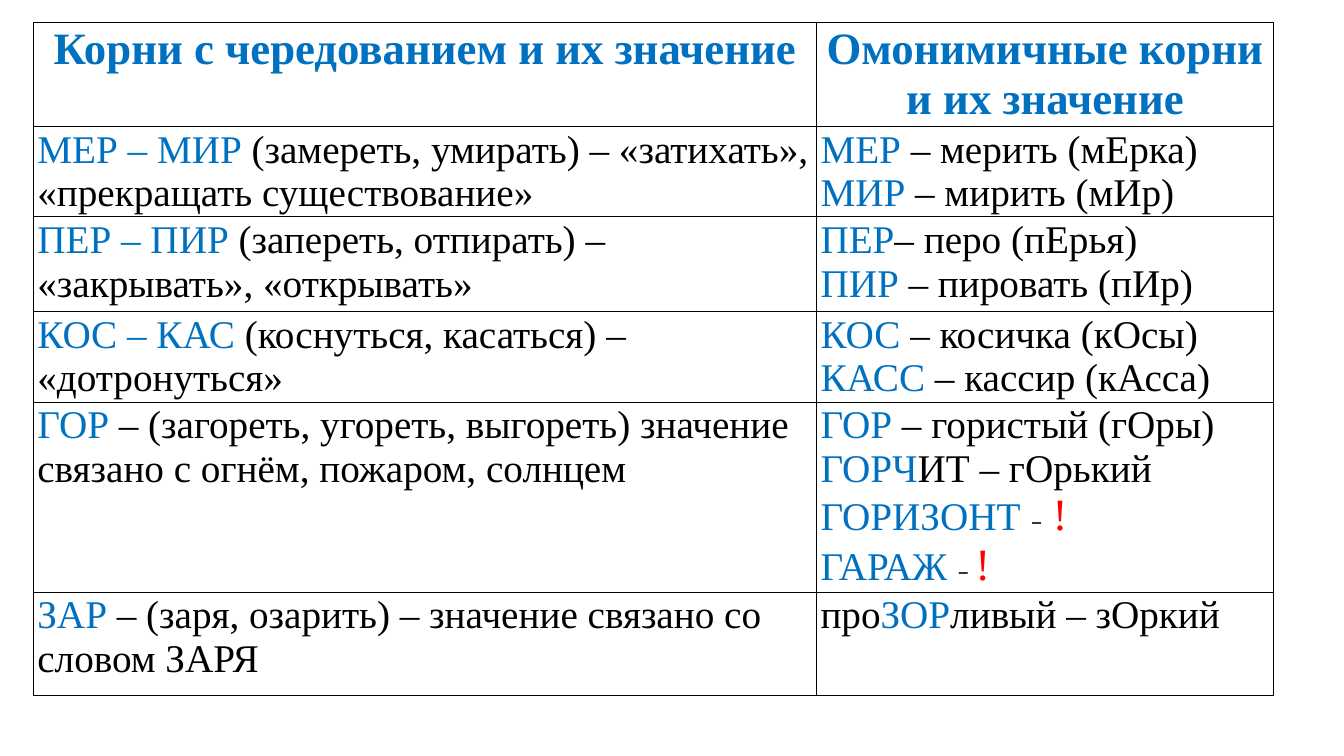
import pptx
import pptx.dml.color
import pptx.enum.text
import pptx.oxml
import pptx.oxml.ns
import pptx.util
from pptx.util import Pt

BLUE = pptx.dml.color.RGBColor(0x00, 0x70, 0xC0)
BLACK = pptx.dml.color.RGBColor(0x00, 0x00, 0x00)
RED = pptx.dml.color.RGBColor(0xFF, 0x00, 0x00)
WHITE = pptx.dml.color.RGBColor(0xFF, 0xFF, 0xFF)

# Run styles: font, size in points, colour, bold
HEADING = ("Times New Roman", 32, BLUE, True)
ROOT = ("Times New Roman", 28, BLUE, False)
PLAIN = ("Times New Roman", 28, BLACK, False)
DASH = ("Calibri", 18, BLACK, False)
ALERT = ("Times New Roman", 32, RED, False)

COLUMN_WIDTHS = [559.4, 326.2]
ROW_HEIGHTS = [74, 64, 67.7, 64, 135.5, 73.5]

# Each cell is a list of paragraphs, each paragraph a list of (text, style) runs
ROWS = [
    [
        [[("Корни с чередованием и их значение", HEADING)]],
        [[("Омонимичные корни и их значение", HEADING)]],
    ],
    [
        [[("МЕР – МИР ", ROOT),
          ("(замереть, умирать) – «затихать», «прекращать существование»", PLAIN)]],
        [[("МЕР", ROOT), (" – мерить (мЕрка)", PLAIN)],
         [("МИР", ROOT), (" – мирить (мИр)", PLAIN)]],
    ],
    [
        [[("ПЕР – ПИР ", ROOT),
          ("(запереть, отпирать) – «закрывать», «открывать»", PLAIN)]],
        [[("ПЕР", ROOT), ("– перо (пЕрья)", PLAIN)],
         [("ПИР", ROOT), (" – пировать (пИр)", PLAIN)]],
    ],
    [
        [[("КОС – КАС ", ROOT),
          ("(коснуться, касаться) – «дотронуться»", PLAIN)]],
        [[("КОС", ROOT), (" – косичка (кОсы)", PLAIN)],
         [("КАСС", ROOT), (" – кассир (кАсса)", PLAIN)]],
    ],
    [
        [[("ГОР ", ROOT),
          ("– (загореть, угореть, выгореть) значение связано с огнём, пожаром, солнцем",
           PLAIN)]],
        [[("ГОР", ROOT), (" – гористый (гОры)", PLAIN)],
         [("ГОРЧ", ROOT), ("ИТ – гОрький", PLAIN)],
         [("ГОРИЗОНТ ", ROOT), ("–", DASH), (" ", ROOT), ("!", ALERT)],
         [("ГАРАЖ ", ROOT), ("– ", DASH), ("!", ALERT)]],
    ],
    [
        [[("ЗАР", ROOT),
          (" – (заря, озарить) – значение связано со словом ЗАРЯ", PLAIN)]],
        [[("про", PLAIN), ("ЗОР", ROOT), ("ливый – зОркий", PLAIN)]],
    ],
]


def add_borders(cell):
    properties = cell._tc.get_or_add_tcPr()
    for side in ("lnL", "lnR", "lnT", "lnB"):
        properties.append(pptx.oxml.parse_xml(
            f'<a:{side} {pptx.oxml.ns.nsdecls("a")} w="{Pt(0.6)}">'
            f'<a:solidFill><a:srgbClr val="{BLACK}"/></a:solidFill></a:{side}>'))


def fill_paragraph(paragraph, runs):
    for text, (font_name, size, color, bold) in runs:
        run = paragraph.add_run()
        run.text = text
        run.font.name = font_name
        run.font.size = Pt(size)
        run.font.color.rgb = color
        run.font.bold = bold


presentation = pptx.Presentation()
presentation.slide_width = Pt(960)
presentation.slide_height = Pt(540)
slide = presentation.slides.add_slide(presentation.slide_layouts[6])

table = slide.shapes.add_table(
    len(ROW_HEIGHTS), len(COLUMN_WIDTHS), Pt(24), Pt(16.2),
    Pt(sum(COLUMN_WIDTHS)), Pt(sum(ROW_HEIGHTS))).table
table.first_row = False
table.horz_banding = False
for column, width in zip(table.columns, COLUMN_WIDTHS):
    column.width = Pt(width)
for row, height in zip(table.rows, ROW_HEIGHTS):
    row.height = Pt(height)

for row, row_content in zip(table.rows, ROWS):
    for cell, paragraphs in zip(row.cells, row_content):
        add_borders(cell)
        cell.fill.solid()
        cell.fill.fore_color.rgb = WHITE
        cell.margin_left = cell.margin_right = Pt(2.7)
        cell.margin_top = cell.margin_bottom = Pt(1.35)
        text_frame = cell.text_frame
        for index, runs in enumerate(paragraphs):
            paragraph = text_frame.add_paragraph() if index else text_frame.paragraphs[0]
            fill_paragraph(paragraph, runs)
            if runs[0][1] is HEADING:
                paragraph.alignment = pptx.enum.text.PP_ALIGN.CENTER

presentation.save("out.pptx")
